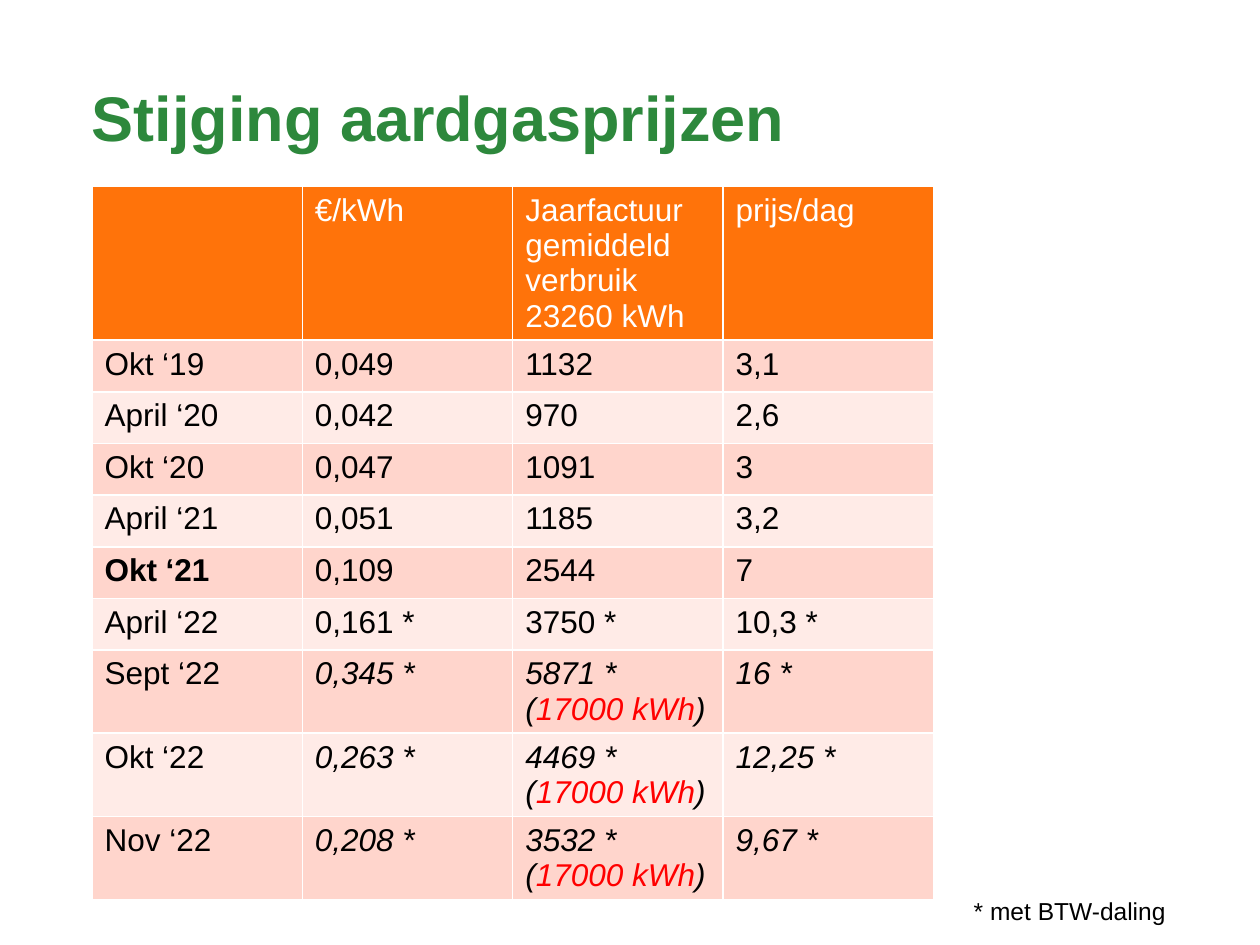
import pptx
import pptx.util
import pptx.dml.color
import pptx.enum.text
import pptx.oxml.ns
import lxml.etree
from pptx.util import Inches, Pt

COLORS = {
    "title": "2D883C",
    "header": "FF730A",
    "odd": "FFD5CC",
    "even": "FFEBE7",
    "white": "FFFFFF",
    "text": "000000",
    "accent": "FF0000",
}
REDUCED_USE = "17000 kWh"
HEADER = ["", "€/kWh", "Jaarfactuur gemiddeld verbruik 23260 kWh", "prijs/dag"]
PRICES = [
    ["Okt ‘19", "0,049", "1132", "3,1"],
    ["April ‘20", "0,042", "970", "2,6"],
    ["Okt ‘20", "0,047", "1091", "3"],
    ["April ‘21", "0,051", "1185", "3,2"],
    ["Okt ‘21", "0,109", "2544", "7"],
    ["April ‘22", "0,161 *", "3750 *", "10,3 *"],
    ["Sept ‘22", "0,345 *", "5871 *\v(17000 kWh)", "16 *"],
    ["Okt ‘22", "0,263 *", "4469 * (17000 kWh)", "12,25 *"],
    ["Nov ‘22", "0,208 *", "3532 *\n(17000 kWh)", "9,67 *"],
]
BOLD_MONTH = "Okt ‘21"
ITALIC_MONTHS = {"Sept ‘22", "Okt ‘22", "Nov ‘22"}


def rgb(name):
    return pptx.dml.color.RGBColor.from_string(COLORS[name])


class SlideBuilder:
    font = "Arial"

    def __init__(self, slide):
        self.s = slide

    def style(self, r, size, color, bold=False, italic=False):
        r.font.name = self.font
        r.font.size = Pt(size)
        r.font.bold = bold
        r.font.italic = italic
        r.font.color.rgb = rgb(color)

    def title(self, text, x, y, w, h):
        sp = self.s.shapes.title
        sp.left, sp.top, sp.width, sp.height = map(Inches, (x, y, w, h))
        tf = sp.text_frame
        tf.margin_left = tf.margin_right = tf.margin_top = tf.margin_bottom = 0
        tf.vertical_anchor = pptx.enum.text.MSO_ANCHOR.TOP
        tf.word_wrap = True
        tf.text = text
        p = tf.paragraphs[0]
        p.alignment = pptx.enum.text.PP_ALIGN.LEFT
        p.line_spacing = 0.86
        self.style(p.runs[0], 36, "title", bold=True)

    def textbox(self, text, x, y, w, h):
        sp = self.s.shapes.add_textbox(*map(Inches, (x, y, w, h)))
        tf = sp.text_frame
        tf.word_wrap = True
        tf.text = text
        self.style(tf.paragraphs[0].runs[0], 14, "text")

    def borders(self, cell):
        tc_pr = cell._tc.get_or_add_tcPr()
        qn = pptx.oxml.ns.qn
        for i, side in enumerate(("a:lnL", "a:lnR", "a:lnT", "a:lnB")):
            ln = lxml.etree.Element(qn(side), w=str(Pt(1)))
            fill = lxml.etree.SubElement(ln, qn("a:solidFill"))
            lxml.etree.SubElement(fill, qn("a:srgbClr"), val=COLORS["white"])
            tc_pr.insert(i, ln)

    def cell(self, cell, text, fill, color, bold=False, italic=False):
        cell.fill.solid()
        cell.fill.fore_color.rgb = rgb(fill)
        self.borders(cell)
        tf = cell.text_frame
        tf.text = text
        for p in tf.paragraphs:
            before, accent, after = p.text.partition(REDUCED_USE)
            if accent:
                p.text = before
                for part in (accent, after):
                    p.add_run().text = part
            p.font.size = Pt(18)
            for r in p.runs:
                run_color = "accent" if r.text == REDUCED_USE else color
                self.style(r, 18, run_color, bold, italic)

    def table(self, header, rows, x, y, col_w, row_h):
        n_rows, n_cols = len(rows) + 1, len(header)
        frame = self.s.shapes.add_table(
            n_rows, n_cols, Inches(x), Inches(y),
            Inches(col_w * n_cols), Inches(row_h * n_rows))
        table = frame.table
        for col in table.columns:
            col.width = Inches(col_w)
        for row in table.rows:
            row.height = Inches(row_h)
        for c, text in enumerate(header):
            self.cell(table.cell(0, c), text, "header", "white")
        for i, values in enumerate(rows, 1):
            month = values[0]
            for c, text in enumerate(values):
                self.cell(table.cell(i, c), text, "odd" if i % 2 else "even", "text",
                          bold=c == 0 and month == BOLD_MONTH,
                          italic=c > 0 and month in ITALIC_MONTHS)


def main():
    prs = pptx.Presentation()
    prs.slide_width, prs.slide_height = Inches(10), Inches(7.5)
    s = prs.slides.add_slide(prs.slide_layouts[5])
    builder = SlideBuilder(s)
    builder.title("Stijging aardgasprijzen", 0.73, 0.71, 6.77, 1.1)
    builder.table(HEADER, PRICES, 0.73, 1.48, 1.67, 0.41)
    builder.textbox("* met BTW-daling", 7.63, 7.06, 3.16, 0.34)
    prs.save("out.pptx")


if __name__ == "__main__":
    main()
